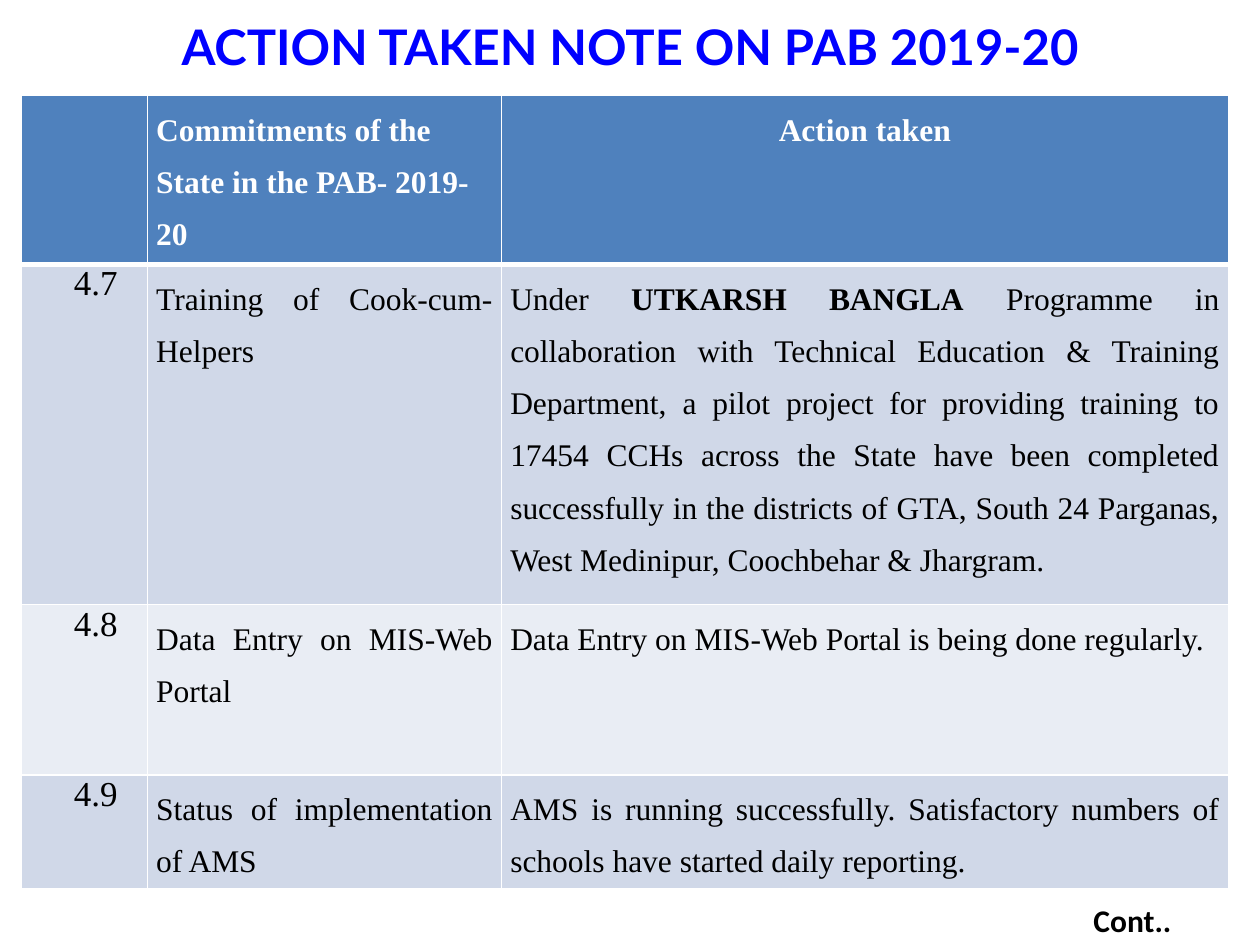
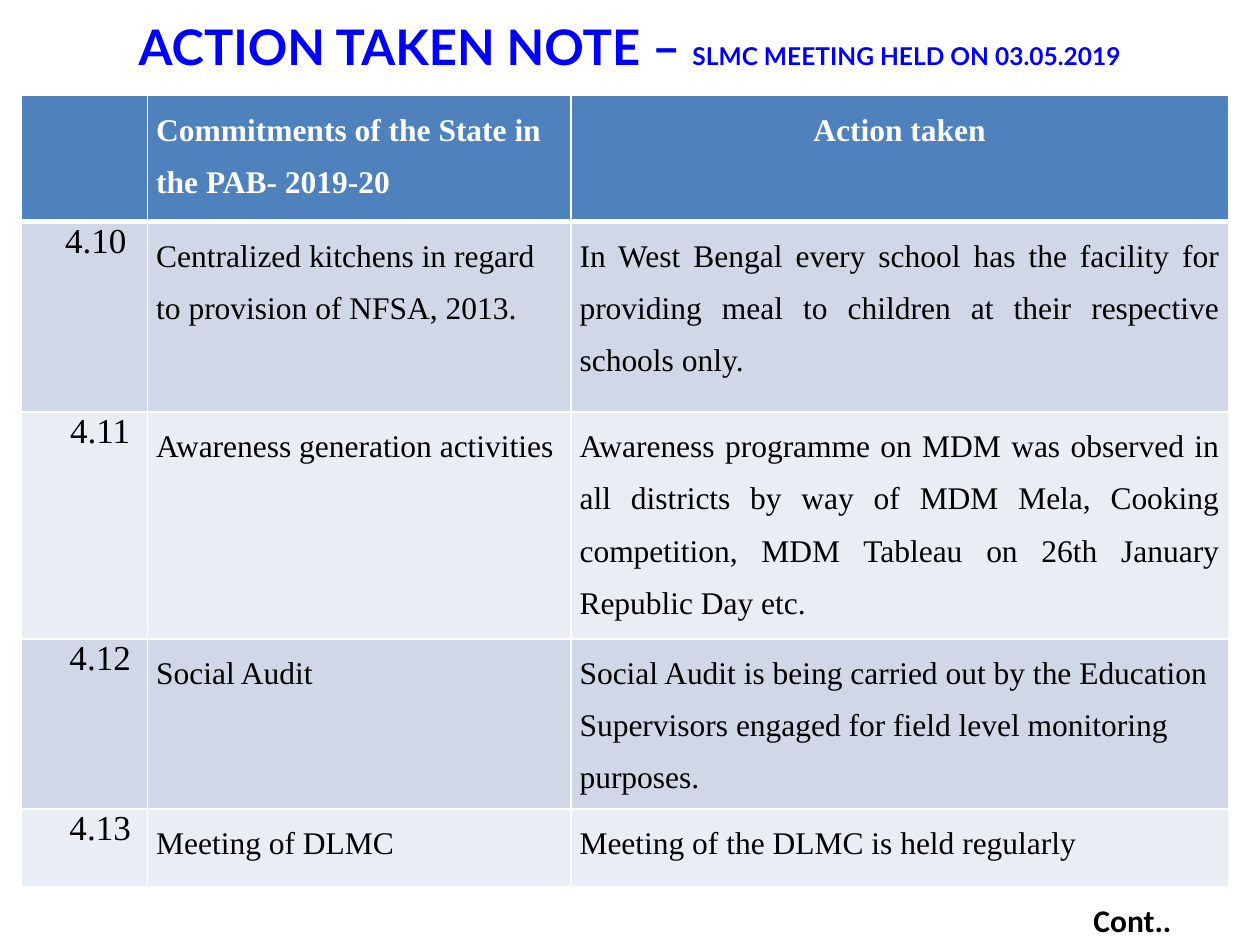
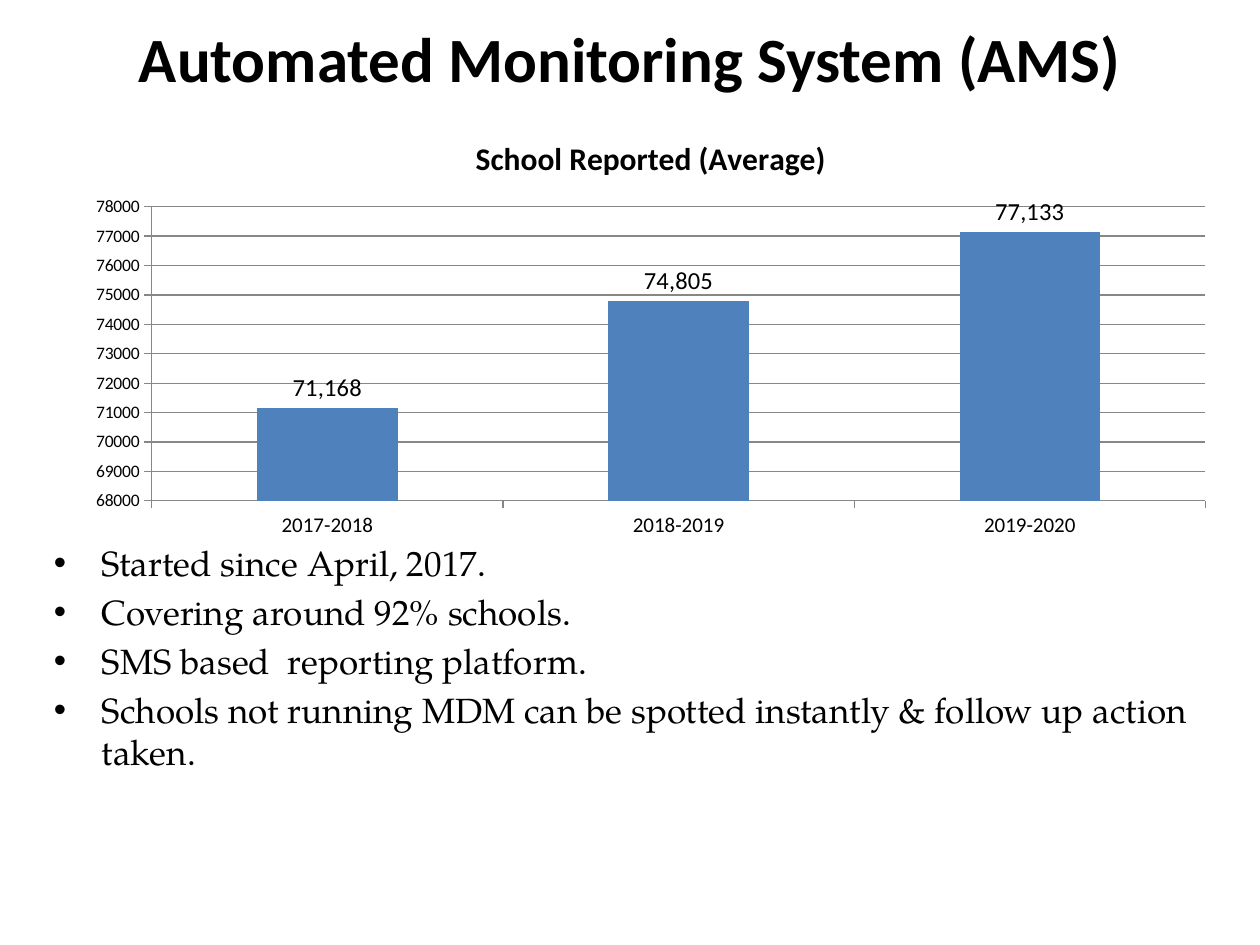
"""Build three slides on midday-meal commitments and automated monitoring."""
from dataclasses import dataclass
from typing import Any

from lxml import etree
from pptx import Presentation, util as u
from pptx.chart import data as cd
from pptx.dml import color as dml
from pptx.enum import chart as ce, text
from pptx.oxml import ns

ALIGN = text.PP_ALIGN
ANCHOR = text.MSO_ANCHOR


@dataclass(frozen=True)
class Theme:
    blue: str = "0000FF"
    accent: str = "4F81BD"
    bands: tuple[str, str] = ("D0D8E8", "E9EDF4")
    black: str = "000000"
    white: str = "FFFFFF"
    grid: str = "878787"
    heading: str = "Lato"
    sans: str = "Calibri"
    serif: str = "Times New Roman"
    book: str = "TeX Gyre Pagella"
    big: int = 36
    title: int = 28
    code: int = 20
    body: int = 18
    small: int = 14
    category: int = 12
    value: int = 10


T = Theme()


@dataclass(frozen=True)
class Run:
    text: str
    size: int = T.body
    font: str = T.serif
    color: str = T.black
    bold: bool = False


@dataclass(frozen=True)
class Para:
    runs: tuple[Run, ...]
    align: Any = ALIGN.LEFT
    spacing: float = 1.0
    before: float = 0
    after: float = 0
    indent: float = 0
    bullet: bool = False


@dataclass(frozen=True)
class Box:
    left: float
    top: float
    width: float
    height: float

    def emu(self) -> tuple[Any, ...]:
        return tuple(map(u.Inches, (self.left, self.top, self.width, self.height)))


@dataclass(frozen=True)
class Commitment:
    code: str
    promise: Para
    action: Para


@dataclass(frozen=True)
class NoteSlide:
    title: tuple[Run, ...]
    columns: tuple[float, ...]
    rows: tuple[float, ...]
    commitments: tuple[Commitment, ...]


def apply(target: Any, values: dict[str, Any]) -> None:
    for name, value in values.items():
        setattr(target, name, value)


def rgb(value: str) -> dml.RGBColor:
    return dml.RGBColor.from_string(value)


def style_font(font: Any, size: int, name: str, color: str, bold: bool) -> None:
    apply(font, {"size": u.Pt(size), "name": name, "bold": bold})
    font.color.rgb = rgb(color)


def write(tf: Any, paras: list[Para]) -> None:
    for i, para in enumerate(paras):
        p = tf.add_paragraph() if i else tf.paragraphs[0]
        apply(p, {"alignment": para.align, "line_spacing": para.spacing,
                  "space_before": u.Pt(para.before), "space_after": u.Pt(para.after)})
        if para.indent:
            pPr = p._p.get_or_add_pPr()
            pPr.set("marL", str(u.Inches(para.indent)))
            pPr.set("indent", str(u.Inches(-para.indent if para.bullet else 0)))
            if para.bullet:
                etree.SubElement(pPr, ns.qn("a:buFont")).set("typeface", "Arial")
                etree.SubElement(pPr, ns.qn("a:buChar")).set("char", "•")
        for run in para.runs:
            r = p.add_run()
            r.text = run.text
            style_font(r.font, run.size, run.font, run.color, run.bold)


def add_text(s: Any, box: Box, paras: list[Para]) -> None:
    tf = s.shapes.add_textbox(*box.emu()).text_frame
    tf.word_wrap = True
    write(tf, paras)


def new_slide(prs: Any, box: Box, runs: tuple[Run, ...], anchor: Any) -> Any:
    s = prs.slides.add_slide(prs.slide_layouts[5])
    sp = s.shapes.title
    apply(sp, dict(zip(("left", "top", "width", "height"), box.emu())))
    apply(sp.text_frame, {"auto_size": text.MSO_AUTO_SIZE.NONE, "word_wrap": True,
                          "vertical_anchor": anchor})
    write(sp.text_frame, [Para(runs, ALIGN.CENTER)])
    return s


def border(cell: Any, widths: dict[str, int]) -> None:
    tcPr = cell._tc.get_or_add_tcPr()
    for side, width in widths.items():
        ln = etree.SubElement(tcPr, ns.qn(f"a:ln{side}"), w=str(u.Pt(width)))
        fill = etree.SubElement(ln, ns.qn("a:solidFill"))
        etree.SubElement(fill, ns.qn("a:srgbClr"), val=T.white)


def head(label: str, align: Any = ALIGN.LEFT) -> Para:
    return Para((Run(label, color=T.white, bold=True),), align, 1.5)


def plain(label: str, align: Any = ALIGN.LEFT, before: float = 0, after: float = 0) -> Para:
    return Para((Run(label),), align, 1.5, before, after)


def just(label: str, before: float = 0, after: float = 0) -> Para:
    return plain(label, ALIGN.JUSTIFY, before, after)


def add_note_table(s: Any, note: NoteSlide) -> None:
    box = Box(0.17, 0.76, sum(note.columns), sum(note.rows))
    table = s.shapes.add_table(len(note.rows), len(note.columns), *box.emu()).table
    for column, width in zip(table.columns, note.columns):
        column.width = u.Inches(width)
    for row, height in zip(table.rows, note.rows):
        row.height = u.Inches(height)
    grid = [(None, head("Commitments of the State in the PAB- 2019-20"),
             head("Action taken", ALIGN.CENTER))]
    grid += [(Para((Run(c.code, T.code),), ALIGN.CENTER, indent=0.25), c.promise, c.action)
             for c in note.commitments]
    for i, paras in enumerate(grid):
        for j, para in enumerate(paras):
            cell = table.cell(i, j)
            side = u.Inches(0.07)
            apply(cell, {"margin_left": side, "margin_right": side, "margin_top": 0,
                         "margin_bottom": 0, "vertical_anchor": ANCHOR.TOP})
            border(cell, {"L": 1, "R": 1, "T": 3 if i == 1 else 1, "B": 1 if i else 3})
            cell.fill.solid()
            cell.fill.fore_color.rgb = rgb(T.bands[(i - 1) % 2] if i else T.accent)
            if para:
                write(cell.text_frame, [para])


def add_note_slide(prs: Any, note: NoteSlide) -> None:
    s = new_slide(prs, Box(0, 0.08, 10, 0.57), note.title, ANCHOR.TOP)
    add_note_table(s, note)
    add_text(s, Box(8.58, 7.1, 1.25, 0.4), [Para((Run("Cont..", font=T.sans, bold=True),))])


def add_report_chart(s: Any) -> None:
    name = "School Reported (Average)"
    data = cd.CategoryChartData()
    data.categories = ["2017-2018", "2018-2019", "2019-2020"]
    data.add_series(name, (71168, 74805, 77133))
    box = Box(0.58, 0.92, 9.17, 3.42)
    chart = s.shapes.add_chart(ce.XL_CHART_TYPE.COLUMN_CLUSTERED, *box.emu(), data).chart
    style_font(chart.font, T.value, T.sans, T.black, False)
    apply(chart, {"has_legend": False, "has_title": True})
    write(chart.chart_title.text_frame,
          [Para((Run(name, font=T.sans, bold=True),), ALIGN.CENTER)])
    plot = chart.plots[0]
    apply(plot, {"gap_width": 150, "vary_by_categories": False, "has_data_labels": True})
    apply(plot.data_labels, {"show_value": True, "number_format": "#,##0",
                             "number_format_is_linked": False,
                             "position": ce.XL_LABEL_POSITION.OUTSIDE_END})
    style_font(plot.data_labels.font, T.small, T.sans, T.black, False)
    fill = plot.series[0].format.fill
    fill.solid()
    fill.fore_color.rgb = rgb(T.accent)
    apply(chart.value_axis, {"minimum_scale": 68000, "maximum_scale": 78000,
                             "major_unit": 1000, "has_major_gridlines": True})
    lines = [chart.value_axis.major_gridlines.format.line]
    for axis, size in ((chart.value_axis, T.value), (chart.category_axis, T.category)):
        style_font(axis.tick_labels.font, size, T.sans, T.black, False)
        lines.append(axis.format.line)
    for line in lines:
        line.color.rgb = rgb(T.grid)
        line.width = u.Pt(0.75)


def add_monitoring_slide(prs: Any) -> None:
    title = Run("Automated Monitoring System (AMS)", T.big, T.sans, bold=True)
    s = new_slide(prs, Box(0, 0, 10, 0.91), (title,), ANCHOR.MIDDLE)
    points = ("Started since April, 2017.",
              "Covering around 92% schools.",
              "SMS based  reporting platform.",
              "Schools not running MDM can be spotted instantly & follow up action taken.")
    add_text(s, Box(0.33, 4.25, 9.33, 3.05),
             [Para((Run(point, T.code, T.book),), before=4, indent=0.38, bullet=True)
              for point in points])
    add_report_chart(s)


def title_run(label: str, size: int = T.title) -> Run:
    return Run(label, size, T.heading, T.blue, True)


NOTES = (
    NoteSlide(
        (title_run("ACTION TAKEN NOTE ON PAB 2019-20"),),
        (1.0, 2.81, 5.77), (1.34, 2.7, 1.35, 0.9),
        (Commitment("4.7 ", just("Training of Cook-cum-Helpers"), Para((
            Run("Under "), Run("UTKARSH BANGLA", bold=True),
            Run(" Programme in collaboration with Technical Education & Training Department, "
                "a pilot project for providing training to 17454 CCHs across the State have "
                "been completed successfully in the districts of GTA, South 24 Parganas, "
                "West Medinipur, Coochbehar & Jhargram.")), ALIGN.JUSTIFY, 1.5, after=10)),
         Commitment("4.8 ", just("Data Entry on MIS-Web Portal"),
                    just("Data Entry on MIS-Web Portal is being done regularly. ")),
         Commitment("4.9 ", just("Status of implementation of AMS"),
                    just("AMS is running successfully. Satisfactory numbers of schools "
                         "have started daily reporting. ", 12, 12)))),
    NoteSlide(
        (title_run("ACTION TAKEN NOTE – "),
         title_run("SLMC MEETING HELD ON 03.05.2019", T.small)),
        (1.0, 3.36, 5.22), (1.0, 1.51, 1.8, 1.35, 0.62),
        (Commitment("4.10 ",
                    plain("Centralized kitchens in regard to provision of NFSA, 2013."),
                    just("In West Bengal every school has the facility for providing meal "
                         "to children at their respective schools only.")),
         Commitment("4.11", plain("Awareness generation activities"),
                    just("Awareness programme on MDM was observed in all districts by way "
                         "of MDM Mela, Cooking competition, MDM Tableau on 26th January "
                         "Republic Day etc.", after=10)),
         Commitment("4.12", plain("Social Audit"),
                    plain("Social Audit is being carried out by the Education Supervisors "
                          "engaged for field level monitoring purposes.")),
         Commitment("4.13", plain("Meeting of DLMC"),
                    plain("Meeting of the DLMC is held regularly")))),
)


def main() -> None:
    prs = Presentation()
    apply(prs, {"slide_width": u.Inches(10), "slide_height": u.Inches(7.5)})
    for note in NOTES:
        add_note_slide(prs, note)
    add_monitoring_slide(prs)
    prs.save("out.pptx")


if __name__ == "__main__":
    main()
